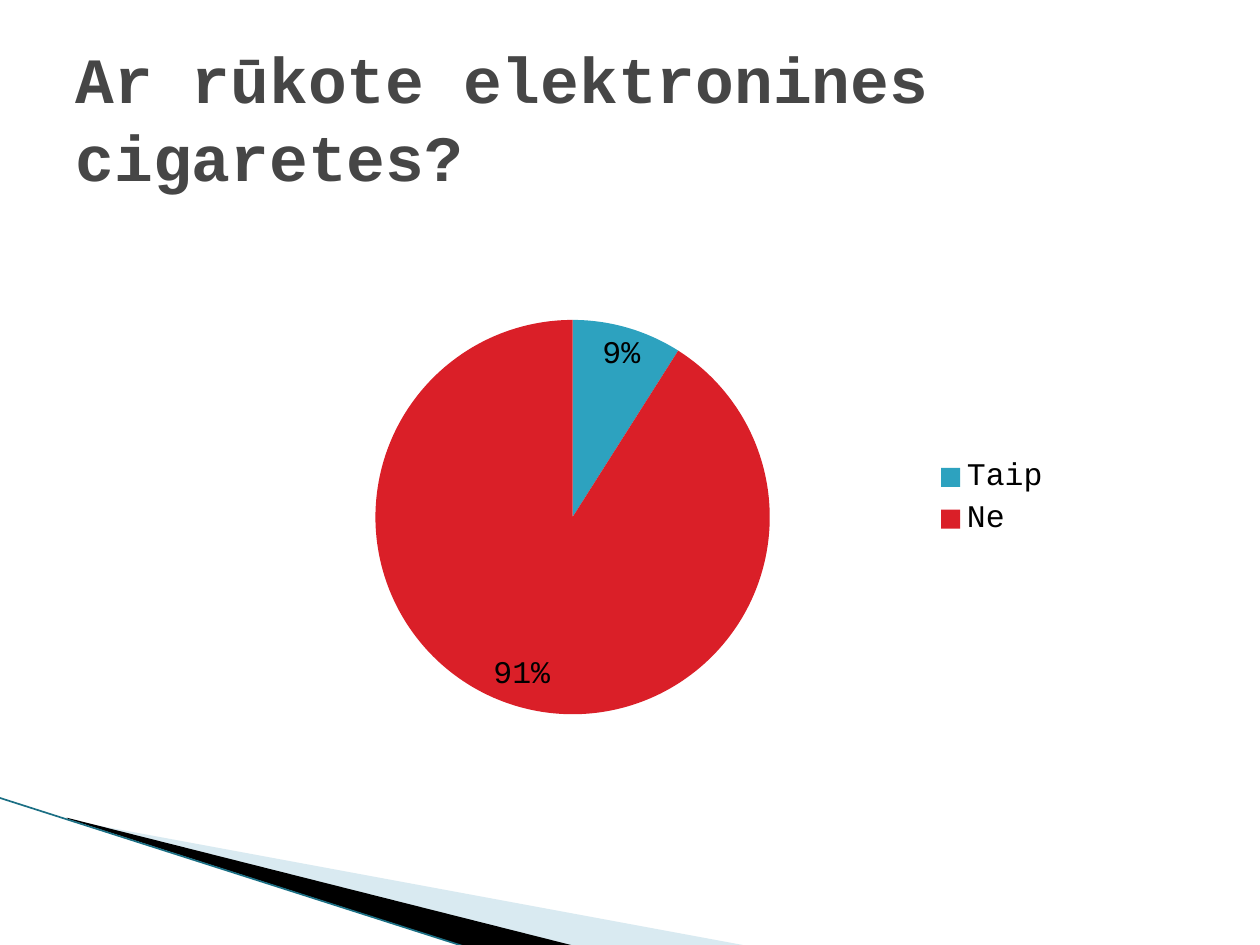
import pptx
import pptx.chart.data
import pptx.dml.color
import pptx.enum.chart
import pptx.enum.shapes
import pptx.enum.text
import pptx.oxml
import pptx.oxml.ns
import pptx.util
from pptx.dml.color import RGBColor
from pptx.util import Inches, Pt

# Content
TITLE = "Ar rūkote elektronines cigaretes?"
FONT = "Courier New"
GREY = RGBColor(0x46, 0x46, 0x46)
BLACK = RGBColor(0, 0, 0)
PALE = RGBColor(0xA0, 0xCB, 0xDC)
TEAL = RGBColor(0x1B, 0x6F, 0x84)
BLUE = RGBColor(0x2D, 0xA2, 0xBF)
RED = RGBColor(0xDA, 0x1F, 0x28)

ANSWERS = [("Taip", 9, BLUE), ("Ne", 91, RED)]
# Corner points, fill, opacity in percent
WEDGES = [
    ([(0.55, 6.51), (5.95, 7.51), (4.56, 7.51), (0.55, 6.5)], PALE, 40),
    ([(0.53, 6.49), (4.57, 7.51), (3.72, 7.52), (0.54, 6.5)], BLACK, 100),
]
# Chart frame, and the pie inside it, in inches
WIDE, HIGH = 6.75, 3.71
PIE_X, PIE_Y, PIE_D = 1.29, 0.44, 3.13


def add_wedge(shapes, points, color, alpha):
    spots = [(Inches(x), Inches(y)) for x, y in points]
    pen = shapes.build_freeform(*spots[0])
    pen.add_line_segments(spots[1:], close=True)
    wedge = pen.convert_to_shape()
    wedge.shadow.inherit = False
    wedge.fill.solid()
    wedge.fill.fore_color.rgb = color
    wedge.line.fill.background()
    if alpha < 100:
        tint = wedge.fill._xPr.find(".//" + pptx.oxml.ns.qn("a:srgbClr"))
        node = pptx.oxml.parse_xml(
            f'<a:alpha {pptx.oxml.ns.nsdecls("a")} val="{alpha * 1000}"/>')
        tint.append(node)


def place_plot(chart):
    area = chart._chartSpace.chart.plotArea
    old = area.find(pptx.oxml.ns.qn("c:layout"))
    if old is not None:
        area.remove(old)
    shares = {"x": PIE_X / WIDE, "y": PIE_Y / HIGH,
              "w": PIE_D / WIDE, "h": PIE_D / HIGH}
    modes = '<c:xMode val="edge"/><c:yMode val="edge"/>'
    sizes = "".join(f'<c:{key} val="{val}"/>' for key, val in shares.items())
    area.insert(0, pptx.oxml.parse_xml(
        f'<c:layout {pptx.oxml.ns.nsdecls("c")}><c:manualLayout>'
        f'<c:layoutTarget val="inner"/>{modes}{sizes}'
        '</c:manualLayout></c:layout>'))


def add_pie(shapes):
    data = pptx.chart.data.CategoryChartData()
    data.categories = [name for name, _, _ in ANSWERS]
    data.add_series("Series 1", [val for _, val, _ in ANSWERS])
    chart = shapes.add_chart(
        pptx.enum.chart.XL_CHART_TYPE.PIE, Inches(1.69), Inches(2.1),
        Inches(WIDE), Inches(HIGH), data).chart
    chart.has_title = False
    chart.font.name = FONT
    chart.font.size = Pt(18)
    chart.font.color.rgb = BLACK
    chart.has_legend = True
    chart.legend.position = pptx.enum.chart.XL_LEGEND_POSITION.RIGHT
    chart.legend.include_in_layout = False
    plot = chart.plots[0]
    plot.vary_by_categories = True
    for i, (_, _, color) in enumerate(ANSWERS):
        fill = plot.series[0].points[i].format.fill
        fill.solid()
        fill.fore_color.rgb = color
    plot.has_data_labels = True
    labels = plot.data_labels
    labels.show_percentage = True
    labels.show_value = False
    labels.number_format = "0%"
    labels.number_format_is_linked = False
    labels.position = pptx.enum.chart.XL_LABEL_POSITION.BEST_FIT
    place_plot(chart)


def main():
    deck = pptx.Presentation()
    deck.slide_width, deck.slide_height = Inches(10), Inches(7.5)
    slide = deck.slides.add_slide(deck.slide_layouts[5])
    shapes = slide.shapes

    # Corner decoration
    for points, color, alpha in WEDGES:
        add_wedge(shapes, points, color, alpha)
    edge = shapes.add_connector(
        pptx.enum.shapes.MSO_CONNECTOR.STRAIGHT,
        Inches(-0.01), Inches(6.33), Inches(3.71), Inches(7.52))
    edge.line.color.rgb = TEAL
    edge.line.width = Pt(0.95)
    edge._element.spPr.append(pptx.oxml.parse_xml(
        f'<a:effectLst {pptx.oxml.ns.nsdecls("a")}/>'))

    # Chart
    add_pie(shapes)

    # Title
    title = shapes.title
    title.left, title.top = Inches(0.5), Inches(0.3)
    title.width, title.height = Inches(9), Inches(1.25)
    frame = title.text_frame
    frame.text = TITLE
    frame.word_wrap = True
    frame.auto_size = pptx.enum.text.MSO_AUTO_SIZE.NONE
    frame.vertical_anchor = pptx.enum.text.MSO_ANCHOR.MIDDLE
    para = frame.paragraphs[0]
    para.alignment = pptx.enum.text.PP_ALIGN.LEFT
    para.font.name = FONT
    para.font.size = Pt(36.9)
    para.font.bold = True
    para.font.color.rgb = GREY

    deck.save("out.pptx")


if __name__ == "__main__":
    main()
